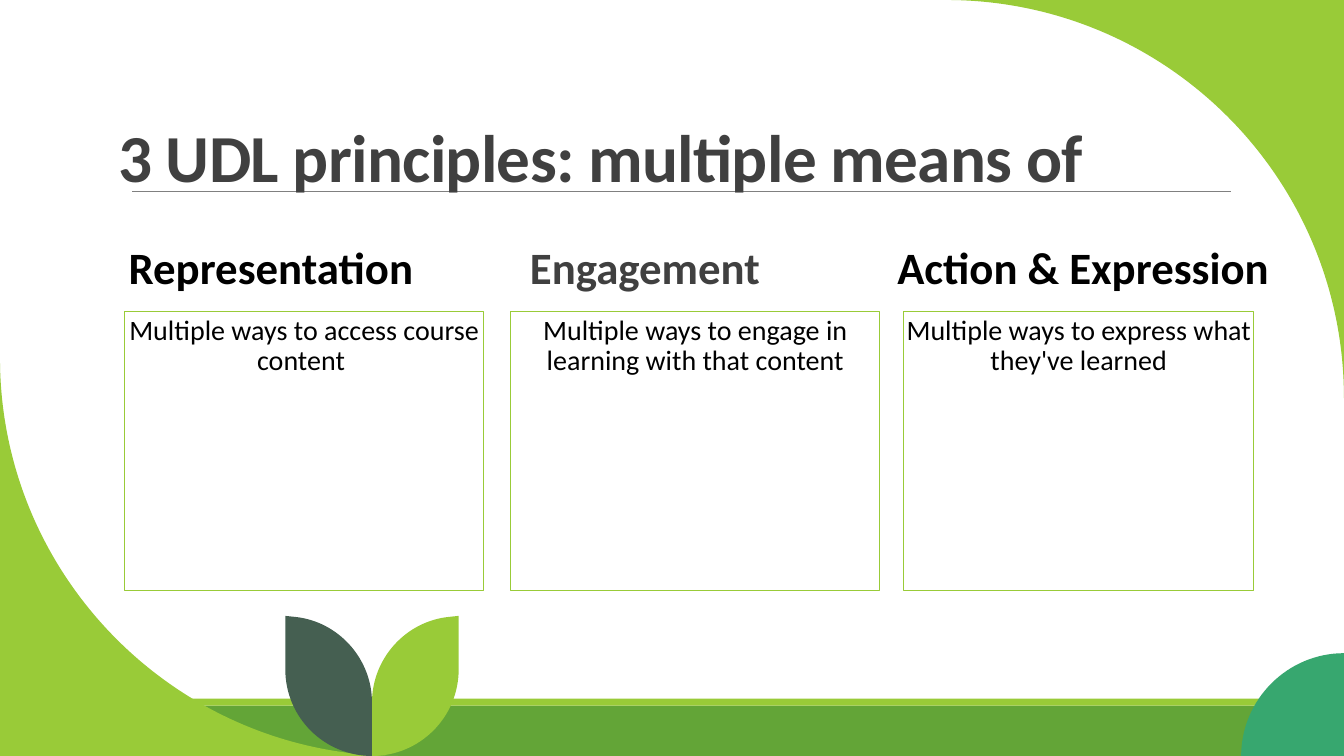
from lxml import etree
from pptx import Presentation
from pptx.dml.color import RGBColor
from pptx.enum.shapes import MSO_CONNECTOR, MSO_SHAPE
from pptx.enum.text import MSO_ANCHOR, PP_ALIGN
from pptx.oxml.ns import qn
from pptx.util import Inches, Pt

LEFT, MID = PP_ALIGN.LEFT, PP_ALIGN.CENTER
TOP, LOW = MSO_ANCHOR.TOP, MSO_ANCHOR.BOTTOM
RECT, LINE = MSO_SHAPE.RECTANGLE, MSO_CONNECTOR.STRAIGHT
LIME = RGBColor(0x99, 0xCB, 0x38)
GREEN = RGBColor(0x63, 0xA5, 0x37)
TEAL = RGBColor(0x37, 0xA7, 0x6F)
DARK = RGBColor(0x45, 0x5F, 0x51)
GRAY = RGBColor(0x80, 0x80, 0x80)
INK = RGBColor(0x40, 0x40, 0x40)
BLACK = RGBColor(0, 0, 0)

deck = Presentation()
deck.slide_width, deck.slide_height = Inches(13.33), Inches(7.5)
col, row = deck.slide_width / 100, deck.slide_height / 100
slide = deck.slides.add_slide(deck.slide_layouts[6])
shapes = slide.shapes


def form(hue, *parts):
    spots = [(round(p[-2] * col), round(p[-1] * row)) for p in parts]
    pen = shapes.build_freeform(*spots[0])
    pen.add_line_segments(spots[1:], close=True)
    shape = pen.convert_to_shape()
    shape.shadow.inherit = False
    shape.fill.solid()
    shape.fill.fore_color.rgb = hue
    shape.line.fill.background()
    legs = list(shape._element.iter(qn("a:lnTo")))
    for leg, part in zip(legs, parts[1:]):
        if len(part) == 6:
            leg.tag = qn("a:cubicBezTo")
            for i in (2, 0):
                dot = etree.Element(qn("a:pt"))
                dot.set("x", str(round(part[i] * col) - shape.left))
                dot.set("y", str(round(part[i + 1] * row) - shape.top))
                leg.insert(0, dot)


def write(text, x, y, w, h, size=20, hue=BLACK, bold=False, align=LEFT,
          anchor=TOP, side=0, lead=0.9, above=12, below=12, edge=None, track=0):
    box = shapes.add_textbox(round(x * col), round(y * row), round(w * col), round(h * row))
    if edge:
        box.line.color.rgb = edge
        box.line.width = Pt(0.75)
    frame = box.text_frame
    frame.word_wrap = True
    frame.vertical_anchor = anchor
    frame.margin_left = frame.margin_right = Inches(side)
    frame.margin_top = frame.margin_bottom = Inches(0.05)
    para = frame.paragraphs[0]
    para.alignment, para.line_spacing = align, lead
    para.space_before, para.space_after = Pt(above), Pt(below)
    run = para.add_run()
    run.text = text
    font = run.font
    font.name, font.size, font.bold = "Calibri", Pt(size), bold
    font.color.rgb = hue
    if track:
        font._element.set("spc", str(round(track * 100)))


for hue, y, h in ((GREEN, 93.33, 6.67), (LIME, 92.4, 0.93)):
    band = shapes.add_shape(RECT, 0, round(y * row), deck.slide_width, round(h * row))
    band.shadow.inherit = False
    band.fill.solid()
    band.fill.fore_color.rgb = hue
    band.line.fill.background()

level = round(25.33 * row)
rule = shapes.add_connector(LINE, round(9.83 * col), level, round(91.56 * col), level)
rule.line.color.rgb = GRAY
rule.line.width = Pt(0.5)
etree.SubElement(rule._element.spPr, qn("a:effectLst"))

form(LIME, (100, 0), (100, 52.67), (100, 23.6, 86.8, 0, 70.37, 0))
form(LIME, (0, 47.33), (0, 76.4, 13.28, 100, 29.63, 100), (0, 100))
form(TEAL, (100, 100), (100, 86.4), (95.8, 86.4, 92.35, 92.53, 92.35, 100))

stem = 27.68
for hue, way in ((LIME, 1), (DARK, -1)):
    tip, bow, dip, rim = (stem + way * n for n in (6.45, 3.53, 2.55, 5.78))
    form(hue, (tip, 81.47), (tip, 88.53), (tip, 94.93, bow, 100, stem, 100),
         (stem, 92.93), (stem, 87.07, dip, 82.13, rim, 81.6))

write("3 UDL principles: multiple means of", 8.05, 5.4, 84.55, 21.2, size=48, hue=INK,
      bold=True, anchor=LOW, side=0.1, lead=0.85, above=0, below=0, track=-0.5)

cards = (
    ("Representation", BLACK, 9.57, 26.03, 6.4,
     "Multiple ways to access course content ", 9.28, 26.71),
    ("Engagement", INK, 39.43, 26.03, 4.27,
     "Multiple ways to engage in learning with that content", 38, 27.46),
    ("Action & Expression", BLACK, 66.77, 28.88, 8.27,
     "Multiple ways to express what they've learned", 67.25, 26.03),
)
for head, hue, x, w, h, body, left, wide in cards:
    write(body, left, 41.2, wide, 36.93, align=MID, below=2, edge=LIME)
    write(head, x, 31.87, w, h, size=32, hue=hue, bold=True)

deck.save("out.pptx")
